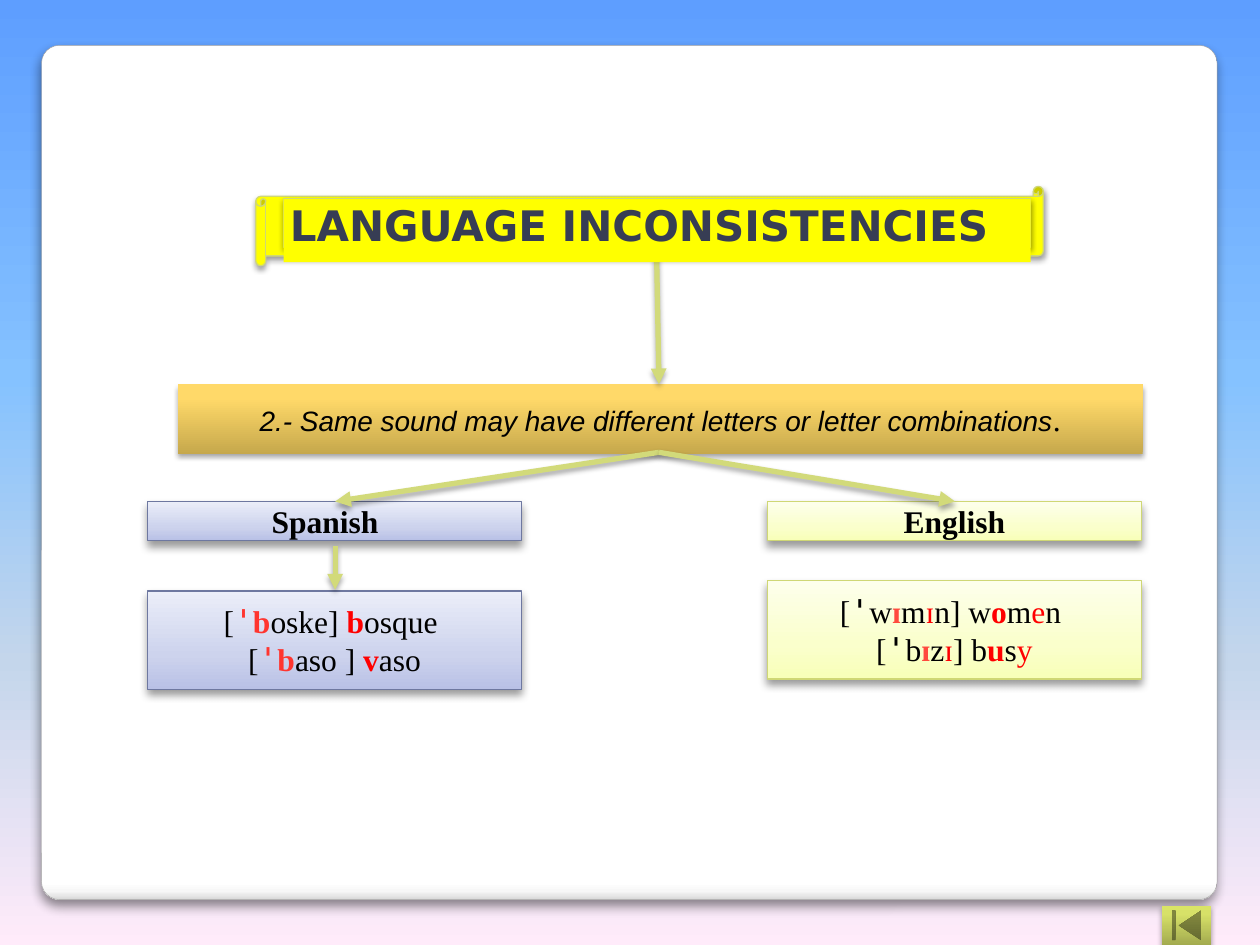
from lxml.etree import SubElement
from pptx import Presentation
from pptx.dml.color import RGBColor
from pptx.enum.shapes import MSO_CONNECTOR, MSO_SHAPE
from pptx.enum.text import MSO_ANCHOR, MSO_AUTO_SIZE, PP_ALIGN
from pptx.oxml.ns import qn
from pptx.util import Inches, Pt

SERIF, SANS, MONO = "Times New Roman", "DejaVu Sans", "DejaVu Sans Mono"
SKY = [(0, "5E9EFF"), (40, "85C2FF"), (70, "C4D6EB"), (100, "FFEBFA")]
CARD = [(0, "FFFFFF"), (98, "FFFFFF"), (99, "F7F7F7"), (100, "D9D9D9")]
GOLD = [(0, "C6A84C"), (80, "FFD969"), (100, "FFDA6B")]
OLIVE = [(0, "A3AB4F"), (80, "D7E168"), (100, "DAE466")]
BLUE = [(0, "B9C1E6"), (35, "CDD3ED"), (100, "EBEEF9")]
LIME = [(0, "F8FFB8"), (35, "FAFFCC"), (100, "FDFFEB")]
EDGE = "CFD775"
LOOKS = {
    "plain": (SERIF, "000000", False),
    "stress": (MONO, "000000", True),
    "red stress": (MONO, "FF352F", True),
    "sound": (SERIF, "FF352F", True),
    "vowel": (SERIF, "FF4A3D", True),
    "key": (SERIF, "FF0000", True),
    "red": (SERIF, "FF0000", False),
}
SPANISH = [
    [("[", "plain"), ("ˈ", "red stress"), ("b", "sound"), ("oske] ", "plain"),
     ("b", "key"), ("osque ", "plain")],
    [("[", "plain"), ("ˈ", "red stress"), ("b", "sound"), ("aso ] ", "plain"),
     ("v", "key"), ("aso", "plain")],
]
ENGLISH = [
    [("[", "plain"), ("ˈ", "stress"), ("w", "plain"), ("ɪ", "vowel"),
     ("m", "plain"), ("ɪ", "red"), ("n] w", "plain"), ("o", "key"),
     ("m", "plain"), ("e", "red"), ("n ", "plain")],
    [("[", "plain"), ("ˈ", "stress"), ("b", "plain"), ("ɪ", "vowel"),
     ("z", "plain"), ("ɪ", "red"), ("] b", "plain"), ("u", "key"),
     ("s", "plain"), ("y", "red")],
]


def tint(code):
    return RGBColor.from_string(code)


class Deck:
    """Holds the style and the current slide, and draws each kind of element."""

    def __init__(self):
        self.show = Presentation()
        self.show.slide_width, self.show.slide_height = Inches(10), Inches(7.5)
        self.slide = self.show.slides.add_slide(self.show.slide_layouts[5])
        self.blend(self.slide.background.fill, self.slide.element, SKY, 270)

    def blend(self, fill, node, stops, angle):
        fill.gradient()
        fill.gradient_angle = angle
        steps = node.find(".//" + qn("a:gsLst"))
        for old in list(steps):
            steps.remove(old)
        for spot, code in stops:
            step = SubElement(steps, qn("a:gs"), pos=str(spot * 1000))
            SubElement(step, qn("a:srgbClr"), val=code)

    def shade(self, effects, alpha, blur, drop):
        cast = SubElement(effects, qn("a:outerShdw"), blurRad=str(Pt(blur)),
                          dist=str(Pt(drop)), dir="5400000", rotWithShape="0")
        hue = SubElement(cast, qn("a:srgbClr"), val="000000")
        SubElement(hue, qn("a:alpha"), val=str(alpha * 1000))

    def shape(self, kind, place, fill, edge=None, shadow=(35, 3, 1.8), angle=90, width=0.75):
        item = self.slide.shapes.add_shape(kind, *map(Inches, place))
        if isinstance(fill, str):
            item.fill.solid()
            item.fill.fore_color.rgb = tint(fill)
        else:
            self.blend(item.fill, item.element, fill, angle)
        if edge:
            item.line.color.rgb = tint(edge)
            item.line.width = Pt(width)
        else:
            item.line.fill.background()
        item.shadow.inherit = False
        self.shade(item.element.find(".//" + qn("a:effectLst")), *shadow)
        return item

    def frame(self, item, right=0.05):
        body = item.text_frame
        body.word_wrap = True
        body.margin_left = body.margin_top = body.margin_bottom = Inches(0.05)
        body.margin_right = Inches(right)
        return body

    def style(self, font, size, name=SERIF, color="000000", bold=False):
        font.size, font.name, font.bold = Pt(size), name, bold
        font.color.rgb = tint(color)

    def label(self, item, text, right=0.05):
        line = self.frame(item, right).paragraphs[0]
        line.text, line.alignment = text, PP_ALIGN.CENTER
        self.style(line.font, 18, bold=True)

    def rule(self, item, text, end):
        line = self.frame(item).paragraphs[0]
        line.alignment = PP_ALIGN.CENTER
        for words, size, name in ((text, 16, "Arial"), (end, 18, SERIF)):
            run = line.add_run()
            run.text = words
            self.style(run.font, size, name)
            run.font.italic = name == "Arial"

    def words(self, item, lines):
        body = self.frame(item)
        for index, parts in enumerate(lines):
            line = body.add_paragraph() if index else body.paragraphs[0]
            line.alignment = PP_ALIGN.CENTER
            for text, look in parts:
                run = line.add_run()
                run.text = text
                self.style(run.font, 18, *LOOKS[look])

    def arrow(self, start, end):
        link = self.slide.shapes.add_connector(
            MSO_CONNECTOR.STRAIGHT, *map(Inches, start + end))
        link.line.color.rgb = tint("D2DA7A")
        link.line.width = Pt(3)
        SubElement(link.element.find(".//" + qn("a:ln")), qn("a:tailEnd"), type="triangle")
        effects = SubElement(link.element.find(qn("p:spPr")), qn("a:effectLst"))
        self.shade(effects, 35, 3, 1.8)

    def title(self, text, place):
        item = self.slide.shapes.title
        item.left, item.top, item.width, item.height = map(Inches, place)
        item.fill.solid()
        item.fill.fore_color.rgb = tint("FFFF00")
        body = self.frame(item)
        body.auto_size, body.vertical_anchor = MSO_AUTO_SIZE.NONE, MSO_ANCHOR.TOP
        line = body.paragraphs[0]
        line.text, line.alignment, line.line_spacing = text, PP_ALIGN.LEFT, 0.9
        self.style(line.font, 24, SANS, "373D54", True)
        item.element.getparent().append(item.element)


def main():
    deck = Deck()
    box = MSO_SHAPE.RECTANGLE
    card = deck.shape(MSO_SHAPE.ROUNDED_RECTANGLE, (0.33, 0.36, 9.33, 6.78), CARD,
                      "A2A1A1", (45, 6, 4), 270, 0.25)
    card.adjustments[0] = 0.021

    bar = deck.shape(box, (1.41, 3.05, 7.66, 0.55), GOLD)
    deck.rule(bar, "2.- Same sound may have different letters or letter combinations", ".")
    deck.arrow((5.21, 1.95), (5.23, 3.05))

    columns = (
        ("Spanish", 1.17, BLUE, "6E78A0", 4.69, SPANISH, 0.2),
        ("English", 6.09, LIME, EDGE, 4.61, ENGLISH, 0.05),
    )
    for name, left, fill, edge, top, lines, right in columns:
        head = deck.shape(box, (left, 3.98, 2.97, 0.31), fill, edge, (40, 5, 3))
        deck.label(head, name, right)
        panel = deck.shape(box, (left, top, 2.97, 0.78), fill, edge, (40, 5, 3))
        deck.words(panel, lines)
        deck.arrow((5.23, 3.59), (left + 1.49, 3.98))
    deck.arrow((2.66, 4.33), (2.66, 4.68))

    for kind, place in ((MSO_SHAPE.HORIZONTAL_SCROLL, (2.03, 1.48, 6.25, 0.63)),
                        (box, (2.25, 1.58, 5.93, 0.38))):
        deck.shape(kind, place, "FFFF00", EDGE, (38, 3, 1.6))
    deck.title("LANGUAGE INCONSISTENCIES", (2.25, 1.58, 5.93, 0.5))
    deck.shape(MSO_SHAPE.ACTION_BUTTON_BEGINNING, (9.22, 7.19, 0.39, 0.31), OLIVE)
    deck.show.save("out.pptx")


if __name__ == "__main__":
    main()
